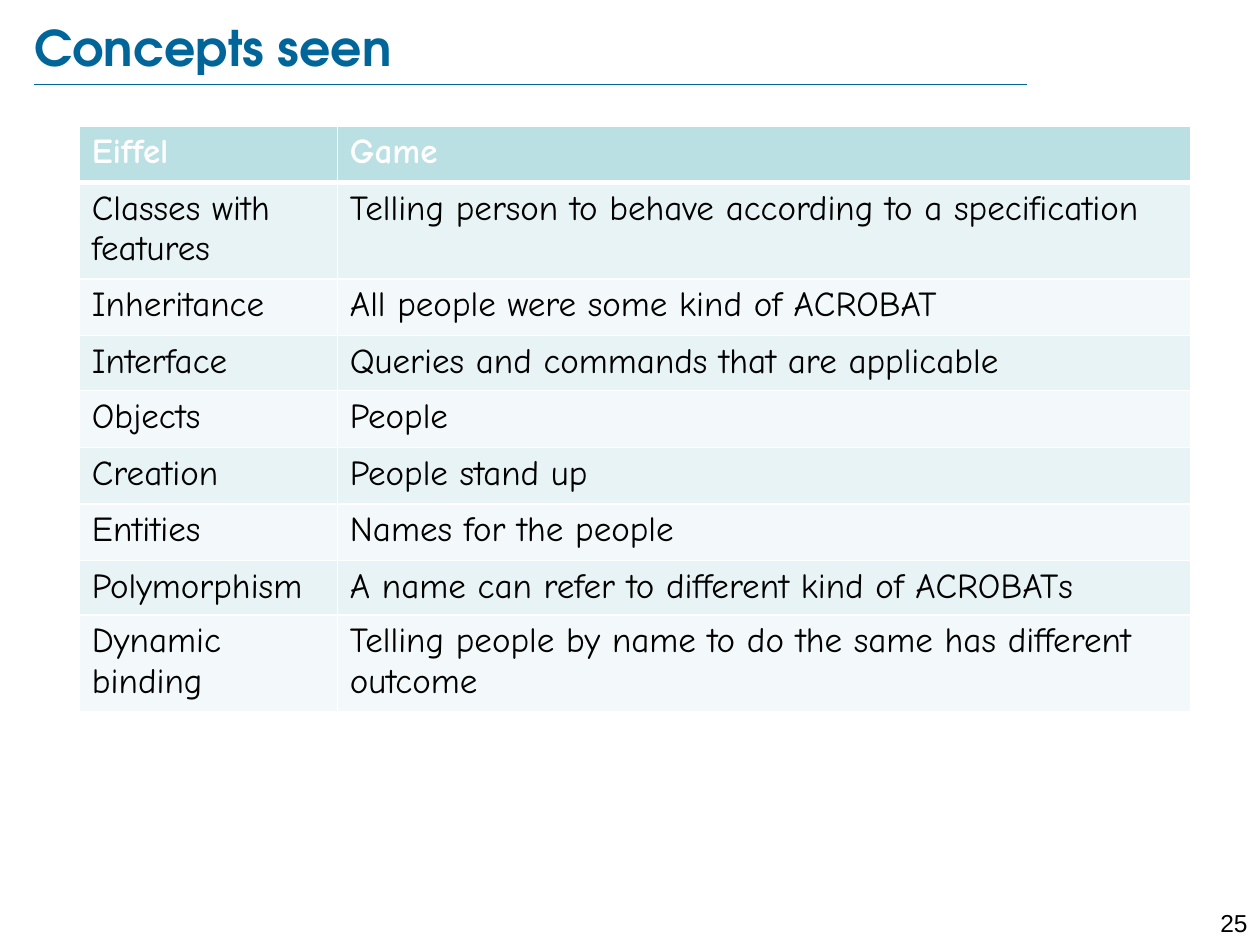
from lxml import etree
from pptx import Presentation
from pptx import util as u
from pptx.dml.color import RGBColor
from pptx.enum import shapes, text
from pptx.oxml import ns

TITLE = {"name": "TeX Gyre Adventor", "size": u.Pt(28), "bold": True}
NUMBER = {"name": "Arial", "size": u.Pt(14), "bold": False}
HEADER = {"name": "Comic Neue", "size": u.Pt(20), "bold": True}
BODY = {**HEADER, "bold": False}

CONCEPTS = [
    ("Eiffel", "Game"),
    ("Classes with features", "Telling person to behave according to a specification"),
    ("Inheritance", "All people were some kind of ACROBAT"),
    ("Interface", "Queries and commands that are applicable"),
    ("Objects", "People"),
    ("Creation", "People stand up"),
    ("Entities", "Names for the people"),
    ("Polymorphism", "A name can refer to different kind of ACROBATs"),
    ("Dynamic binding", "Telling people by name to do the same has different outcome"),
]
COLUMN_WIDTHS = [5.2, 17.2]
ROW_HEIGHTS = [1.14, 1.87, 1.14, 1.06, 1.15, 1.14, 1.14, 1.06, 1.87]


def colour(value):
    return RGBColor.from_string(value)


class ConceptSlide:
    """Holds the text styles and the slide that elements are added to."""

    def __init__(self, page):
        self.page = page

    def add_words(self, para, words, style, ink):
        span = para.add_run()
        span.text = words
        for name, value in style.items():
            setattr(span.font, name, value)
        span.font.color.rgb = colour(ink)

    def label(self, words, place, style, ink, align, frame_format):
        box = self.page.shapes.add_textbox(*map(u.Cm, place))
        for name, value in frame_format.items():
            setattr(box.text_frame, name, value)
        para = box.text_frame.paragraphs[0]
        para.alignment = align
        self.add_words(para, words, style, ink)

    def rule(self, start, end, ink, width):
        line = self.page.shapes.add_connector(
            shapes.MSO_CONNECTOR.STRAIGHT, *map(u.Cm, start + end))
        line.line.color.rgb = colour(ink)
        line.line.width = u.Pt(width)
        etree.SubElement(line._element.spPr, ns.qn("a:effectLst"))

    def border(self, cell, side, width, ink="FFFFFF"):
        properties = cell._tc.get_or_add_tcPr()
        edge = etree.SubElement(properties, ns.qn(f"a:ln{side}"), w=str(u.Pt(width)))
        fill = etree.SubElement(edge, ns.qn("a:solidFill"))
        etree.SubElement(fill, ns.qn("a:srgbClr"), val=ink)

    def table(self, rows, left, top, widths, heights):
        place = map(u.Cm, (left, top, sum(widths), sum(heights)))
        grid = self.page.shapes.add_table(len(rows), len(widths), *place).table
        grid.horz_banding = False
        for column, width in zip(grid.columns, widths):
            column.width = u.Cm(width)
        for index, (row, height) in enumerate(zip(grid.rows, heights)):
            row.height = u.Cm(height)
            style, ink = (BODY, "000000") if index else (HEADER, "FFFFFF")
            shade = ("E7F3F4" if index % 2 else "F3F9FA") if index else "BBE0E3"
            edges = {"L": 1, "R": 1, "T": 3 if index == 1 else 1, "B": 1 if index else 3}
            for cell, words in zip(row.cells, rows[index]):
                for side, width in edges.items():
                    self.border(cell, side, width)
                cell.fill.solid()
                cell.fill.fore_color.rgb = colour(shade)
                self.add_words(cell.text_frame.paragraphs[0], words, style, ink)


def main():
    deck = Presentation()
    deck.slide_width, deck.slide_height = u.Cm(25.4), u.Cm(19.05)
    slide = ConceptSlide(deck.slides.add_slide(deck.slide_layouts[6]))
    slide.rule((0.69, 1.7), (20.7, 1.7), "006699", 0.25)
    slide.label("25", (24, 18.19, 1.4, 0.61), NUMBER, "000000",
                text.PP_ALIGN.RIGHT, {"word_wrap": True})
    margins = dict.fromkeys(
        ("margin_left", "margin_top", "margin_right", "margin_bottom"), 0)
    slide.label("Concepts seen", (0.69, 0.33, 22.76, 1.22), TITLE, "006699",
                text.PP_ALIGN.LEFT,
                {**margins, "word_wrap": True, "vertical_anchor": text.MSO_ANCHOR.MIDDLE})
    slide.table(CONCEPTS, 1.6, 2.54, COLUMN_WIDTHS, ROW_HEIGHTS)
    deck.save("out.pptx")


if __name__ == "__main__":
    main()
